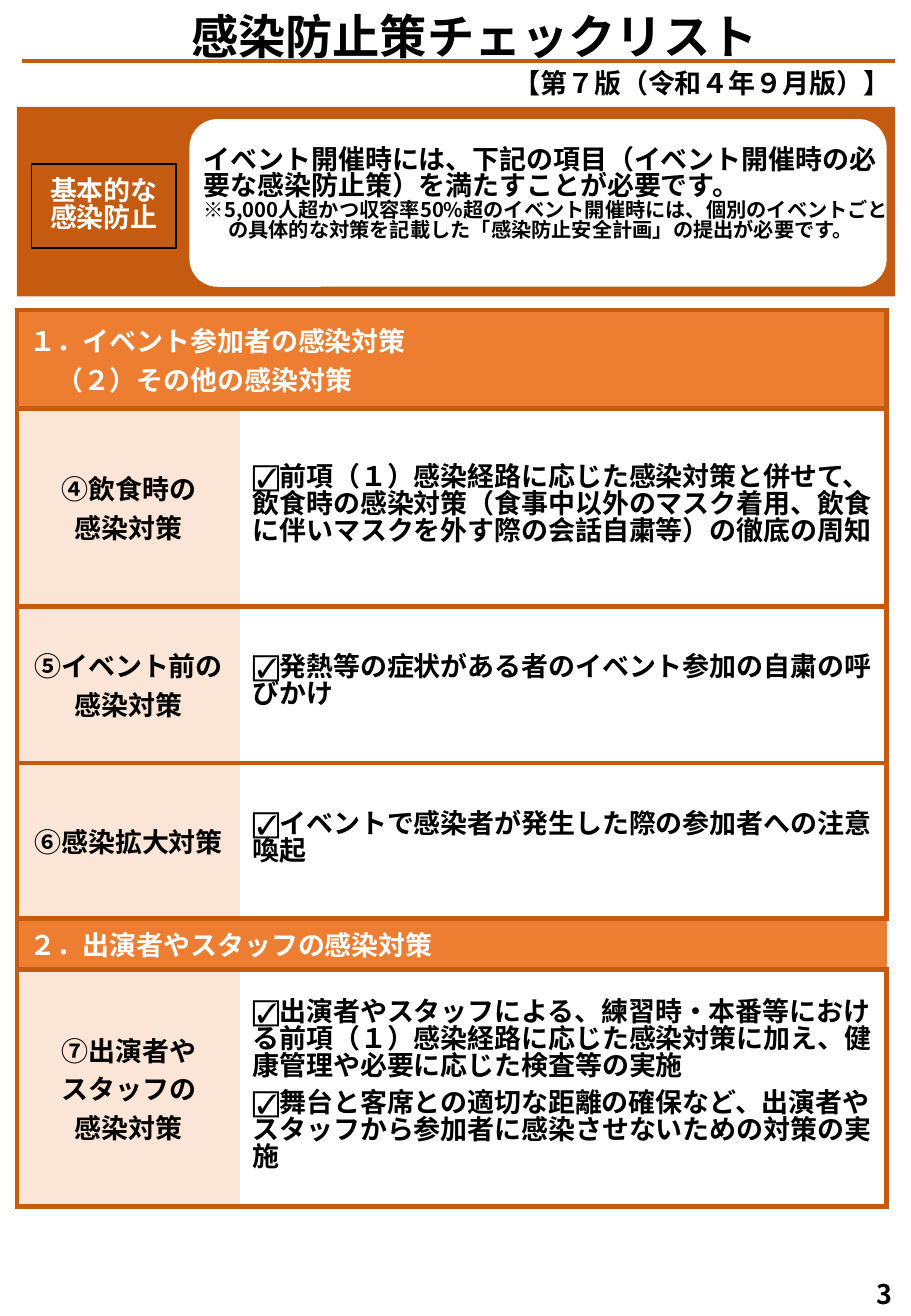
import pptx
import pptx.util
import pptx.dml.color
import pptx.enum.shapes
import pptx.enum.text
import pptx.oxml.ns
import lxml.etree

WIDTH, HEIGHT = pptx.util.Inches(7.5), pptx.util.Inches(10.83)
RUST, ORANGE, PEACH, WHITE, BLACK = "C55A11", "ED7D31", "FBE5D6", "FFFFFF", "000000"
GOTHIC, LATIN = "Noto Sans CJK JP", "Calibri"
CENTER = pptx.enum.text.PP_ALIGN.CENTER
TOP, MIDDLE = pptx.enum.text.MSO_ANCHOR.TOP, pptx.enum.text.MSO_ANCHOR.MIDDLE
SHAPES = pptx.enum.shapes.MSO_SHAPE

COLUMNS = [24.53, 70.93]
CHECKLIST = [
    (7.48, ["１．イベント参加者の感染対策", "（２）その他の感染対策"], []),
    (15.05, ["④飲食時の", "感染対策"],
     ["☑前項（１）感染経路に応じた感染対策と併せて、飲食時の感染対策（食事中以外のマスク着用、飲食に伴いマスクを外す際の会話自粛等）の徹底の周知"]),
    (11.91, ["⑤イベント前の感染対策"],
     ["☑発熱等の症状がある者のイベント参加の自粛の呼びかけ"]),
    (11.82, ["⑥感染拡大対策"],
     ["☑イベントで感染者が発生した際の参加者への注意喚起"]),
    (3.88, ["２．出演者やスタッフの感染対策"], []),
    (18.01, ["⑦出演者や", "スタッフの", "感染対策"],
     ["☑出演者やスタッフによる、練習時・本番等における前項（１）感染経路に応じた感染対策に加え、健康管理や必要に応じた検査等の実施",
      "☑舞台と客席との適切な距離の確保など、出演者やスタッフから参加者に感染させないための対策の実施"]),
]


def across(percent):
    return round(WIDTH * percent / 100)


def down(percent):
    return round(HEIGHT * percent / 100)


def area(left, top, width, height):
    return across(left), down(top), across(width), down(height)


def color(hex_value):
    return pptx.dml.color.RGBColor.from_string(hex_value)


def paint(target, hex_value):
    target.fill.solid()
    target.fill.fore_color.rgb = color(hex_value)


def write(frame, lines, size=16, ink=BLACK, font=GOTHIC, align=None, spacing=None, after=None):
    for number, line in enumerate(lines):
        paragraph = frame.paragraphs[0] if number == 0 else frame.add_paragraph()
        paragraph.alignment = align
        paragraph.line_spacing = spacing
        paragraph.space_after = after
        run = paragraph.add_run()
        run.text = line
        run.font.size = pptx.util.Pt(size)
        run.font.bold = True
        run.font.name = font
        run.font.color.rgb = color(ink)
        properties = run.font._element
        east_asian = lxml.etree.SubElement(properties, pptx.oxml.ns.qn("a:ea"))
        east_asian.set("typeface", GOTHIC)
    return paragraph


def indent(paragraph, margin, first_line):
    properties = paragraph._p.get_or_add_pPr()
    properties.set("marL", str(across(margin)))
    properties.set("indent", str(across(first_line)))


def add_text(slide, place, anchor=TOP):
    frame = slide.shapes.add_textbox(*area(*place)).text_frame
    frame.word_wrap = True
    frame.vertical_anchor = anchor
    return frame


def add_panel(slide, kind, place, fill=None, outline=None):
    panel = slide.shapes.add_shape(kind, *area(*place))
    panel.shadow.inherit = False
    if fill:
        paint(panel, fill)
    else:
        panel.fill.background()
    if outline:
        panel.line.color.rgb = color(outline)
        panel.line.width = pptx.util.Pt(1)
    else:
        panel.line.fill.background()
    return panel


def add_rule(slide, left, right, level):
    rule = slide.shapes.add_connector(
        pptx.enum.shapes.MSO_CONNECTOR.STRAIGHT,
        across(left), down(level), across(right), down(level))
    rule.line.color.rgb = color(RUST)
    rule.line.width = pptx.util.Pt(2.25)
    lxml.etree.SubElement(rule._element.spPr, pptx.oxml.ns.qn("a:effectLst"))


def style_cell(cell, fill, sides):
    qn = pptx.oxml.ns.qn
    properties = cell._tc.get_or_add_tcPr()
    for side in "LRTB":
        border = lxml.etree.SubElement(properties, qn("a:ln" + side))
        border.set("w", str(pptx.util.Pt(3)))
        if side in sides:
            solid = lxml.etree.SubElement(border, qn("a:solidFill"))
            lxml.etree.SubElement(solid, qn("a:srgbClr")).set("val", RUST)
        else:
            lxml.etree.SubElement(border, qn("a:noFill"))
    paint(cell, fill)
    cell.vertical_anchor = MIDDLE


def add_checklist(slide):
    heights = [height for height, _, _ in CHECKLIST]
    place = area(1.87, 23.55, sum(COLUMNS), sum(heights))
    table = slide.shapes.add_table(len(CHECKLIST), len(COLUMNS), *place).table
    for column, width in zip(table.columns, COLUMNS):
        column.width = across(width)
    for number, (height, topic, measures) in enumerate(CHECKLIST):
        table.rows[number].height = down(height)
        label, detail = table.cell(number, 0), table.cell(number, 1)
        if measures:
            style_cell(label, PEACH, "LTB")
            style_cell(detail, WHITE, "RTB")
            write(label.text_frame, topic, font=LATIN, align=CENTER)
            write(detail.text_frame, measures, spacing=pptx.util.Pt(16), after=pptx.util.Pt(6))
        else:
            right_edge = "R" if number == 0 else ""
            style_cell(label, ORANGE, "LTB" + right_edge)
            style_cell(detail, ORANGE, "TB" + right_edge)
            label.merge(detail)
            last_line = write(label.text_frame, topic, ink=WHITE, font=LATIN)
            if len(topic) > 1:
                indent(last_line, 2.96, 0)


def add_heading(slide):
    title = add_text(slide, (4.13, 0.09, 95.87, 5.26))
    write(title, ["感染防止策チェックリスト"], size=28, align=CENTER)
    add_rule(slide, 2.4, 98.27, 4.62)
    edition = add_text(slide, (55.07, 4.62, 44.93, 3.42))
    write(edition, ["【第７版（令和４年９月版）】"])


def add_banner(slide):
    add_panel(slide, SHAPES.RECTANGLE, (1.87, 8.13, 96.4, 14.4), fill=RUST)
    add_panel(slide, SHAPES.ROUNDED_RECTANGLE, (20.8, 9.05, 76.53, 12.74), fill=WHITE)
    badge = add_panel(slide, SHAPES.RECTANGLE, (3.47, 12.47, 15.87, 6.37), outline=BLACK)
    badge.text_frame.vertical_anchor = MIDDLE
    write(badge.text_frame, ["基本的な", "感染防止"], ink=WHITE, align=CENTER, spacing=0.82)
    notice = add_text(slide, (21.07, 10.8, 77.87, 9.88))
    write(notice, ["イベント開催時には、下記の項目（イベント開催時の必要な感染防止策）を満たすことが必要です。"], spacing=0.82)
    condition = notice.add_paragraph()
    condition.line_spacing = 0.82
    indent(condition, 2.67, -2.67)
    run = condition.add_run()
    run.text = "※5,000人超かつ収容率50%超のイベント開催時には、個別のイベントごとの具体的な対策を記載した「感染防止安全計画」の提出が必要です。"
    run.font.size = pptx.util.Pt(12)
    run.font.bold = True
    run.font.name = GOTHIC
    run.font.color.rgb = color(BLACK)
    lxml.etree.SubElement(run.font._element, pptx.oxml.ns.qn("a:ea")).set("typeface", GOTHIC)


def add_page_number(slide):
    page = add_text(slide, (94.27, 96.58, 5.73, 3.42), MIDDLE)
    write(page, ["3"], align=CENTER)


def main():
    deck = pptx.Presentation()
    deck.slide_width, deck.slide_height = WIDTH, HEIGHT
    slide = deck.slides.add_slide(deck.slide_layouts[6])
    add_checklist(slide)
    add_banner(slide)
    add_heading(slide)
    add_page_number(slide)
    deck.save("out.pptx")


if __name__ == "__main__":
    main()
